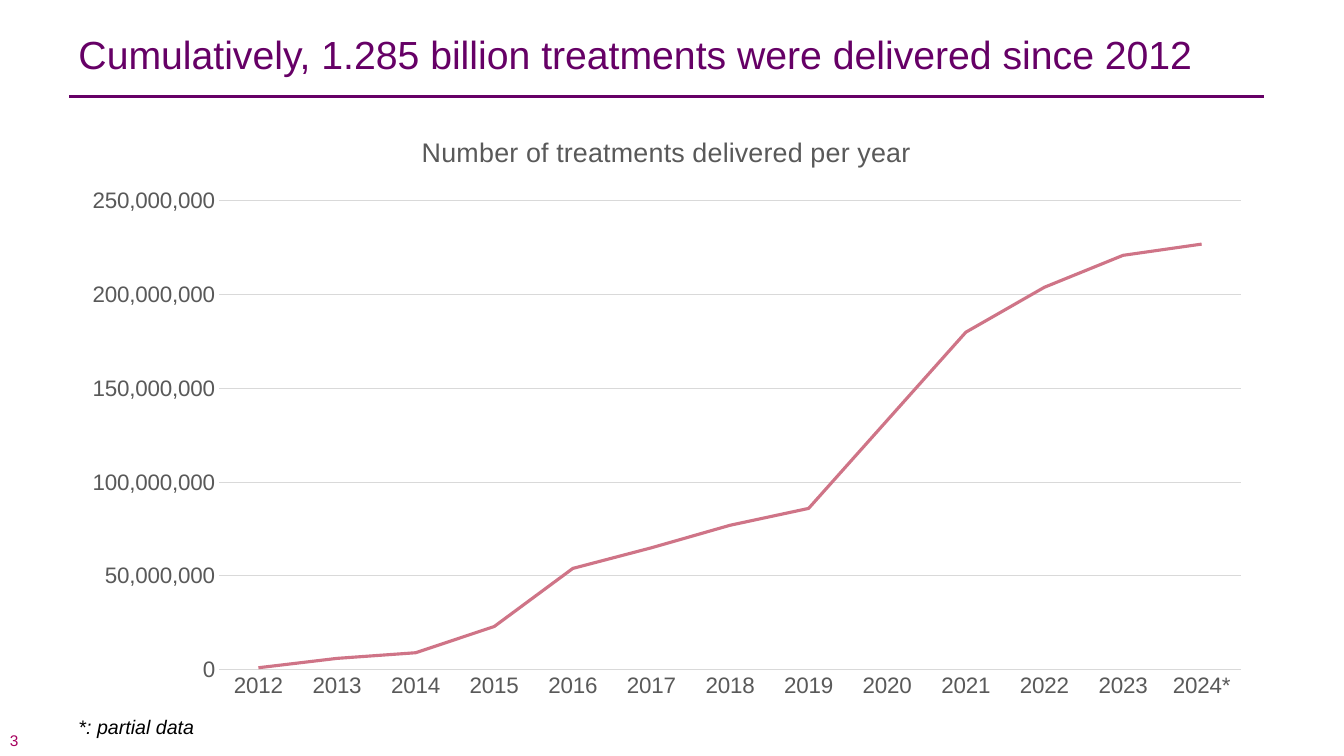
"""Build a slide with a line chart of treatments delivered per year."""
from lxml import etree
from pptx import Presentation
from pptx.chart.data import CategoryChartData
from pptx.dml.color import RGBColor
from pptx.enum.chart import XL_CHART_TYPE as ChartType, XL_TICK_MARK as TickMark
from pptx.enum.shapes import MSO_CONNECTOR as Connector
from pptx.enum.text import MSO_ANCHOR as Anchor
from pptx.oxml.ns import qn
from pptx.util import Pt

COLORS = {
    "purple": "660066",
    "magenta": "A7005F",
    "rose": "CF7487",
    "gray": "595959",
    "grid": "D9D9D9",
    "black": "000000",
}
FONT = "Arial"
YEARS = [str(year) for year in range(2012, 2024)] + ["2024*"]
MILLIONS = [1, 6, 9, 23, 54, 65, 77, 86, 133, 180, 204, 221, 227]


def style_font(font, size, color, italic=False):
    font.name = FONT
    font.size = Pt(size)
    font.bold = False
    font.italic = italic
    font.color.rgb = RGBColor.from_string(COLORS[color])


def add_text(text, left, top, width, height, size, color,
             italic=False, anchor=Anchor.TOP, spacing=None):
    box = page.shapes.add_textbox(Pt(left), Pt(top), Pt(width), Pt(height))
    frame = box.text_frame
    frame.word_wrap = True
    frame.vertical_anchor = anchor
    para = frame.paragraphs[0]
    if spacing:
        para.line_spacing = Pt(spacing)
    span = para.add_run()
    span.text = text
    style_font(span.font, size, color, italic)


deck = Presentation()
deck.slide_width, deck.slide_height = Pt(960), Pt(540)
page = deck.slides.add_slide(deck.slide_layouts[6])

add_text("3", 0, 522.5, 76, 13, size=11, color="magenta", anchor=Anchor.MIDDLE)
add_text("Cumulatively, 1.285 billion treatments were delivered since 2012",
         49, 26, 870, 54, size=28, color="purple", spacing=26)

rule = page.shapes.add_connector(Connector.STRAIGHT, Pt(49.5), Pt(69), Pt(903), Pt(69))
rule.line.color.rgb = RGBColor.from_string(COLORS["purple"])
rule.line.width = Pt(2)
etree.SubElement(rule._element.spPr, qn("a:effectLst"))

add_text("*: partial data", 49, 507, 700, 24.5, size=14, color="black", italic=True)

chart_data = CategoryChartData(number_format="#,##0")
chart_data.categories = YEARS
chart_data.add_series("Series 1", [value * 1_000_000 for value in MILLIONS])
chart = page.shapes.add_chart(
    ChartType.LINE, Pt(49), Pt(80), Pt(854.5), Pt(427), chart_data).chart
style_font(chart.font, 16, "black")
chart.has_legend = False
chart.has_title = True
title = chart.chart_title.text_frame
title.text = "Number of treatments delivered per year"
style_font(title.paragraphs[0].runs[0].font, 19.2, "gray")

for axis in (chart.category_axis, chart.value_axis):
    axis.major_tick_mark = axis.minor_tick_mark = TickMark.NONE
    style_font(axis.tick_labels.font, 16, "gray")

value_axis = chart.value_axis
value_axis.minimum_scale = 0
value_axis.maximum_scale = 250_000_000
value_axis.major_unit = 50_000_000
value_axis.tick_labels.number_format = "#,##0"
value_axis.tick_labels.number_format_is_linked = False
value_axis.format.line.fill.background()

for line in (chart.category_axis.format.line, value_axis.major_gridlines.format.line):
    line.color.rgb = RGBColor.from_string(COLORS["grid"])
    line.width = Pt(0.75)

plot = chart.plots[0]
plot.vary_by_categories = False
treatments = plot.series[0]
treatments.smooth = False
treatments.format.line.color.rgb = RGBColor.from_string(COLORS["rose"])
treatments.format.line.width = Pt(2.25)

deck.save("out.pptx")
